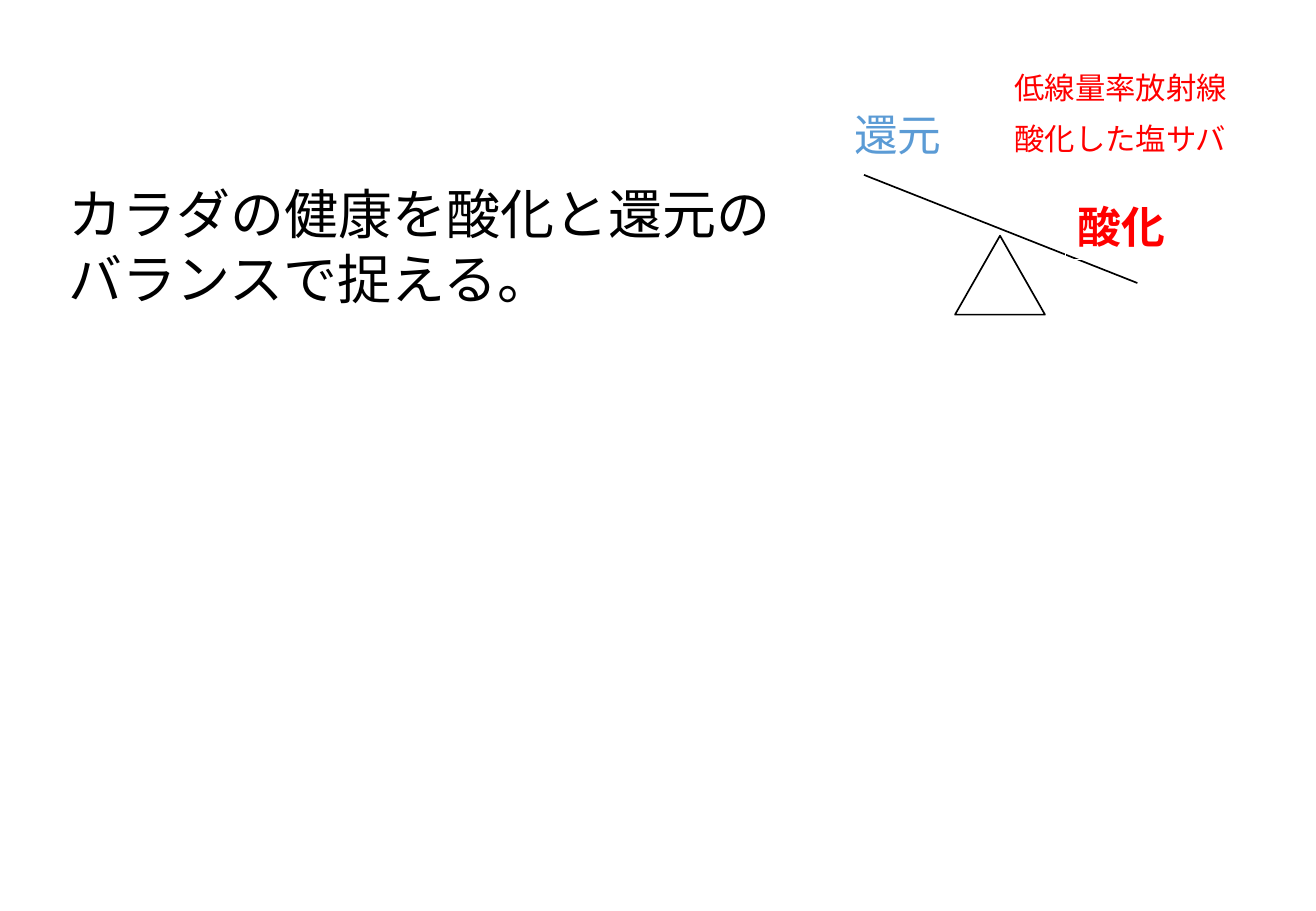
import pptx
import pptx.util
import pptx.dml.color
import pptx.enum.dml
import pptx.enum.lang
import pptx.enum.shapes
import pptx.enum.text
import pptx.oxml

THEME = {
    "font": "Calibri",
    "white": "FFFFFF",
    "black": "000000",
    "reduction": "5B9BD5",
    "oxidation": "FF0000",
    "title_size": 32,
    "label_size": 25.9,
    "note_size": 18,
    "line_width": 1,
    "frame_width": 0.75,
}
PX = 9144


def colour(name):
    return pptx.dml.color.RGBColor.from_string(THEME[name])


def write_text(box, lines, size, colour_name, bold=False):
    frame = box.text_frame
    frame_format = {
        "word_wrap": False,
        "auto_size": pptx.enum.text.MSO_AUTO_SIZE.NONE,
        "vertical_anchor": pptx.enum.text.MSO_ANCHOR.TOP,
    }
    for name, value in frame_format.items():
        setattr(frame, name, value)
    font_format = {
        "name": THEME["font"],
        "size": pptx.util.Pt(THEME[size]),
        "bold": bold,
        "language_id": pptx.enum.lang.MSO_LANGUAGE_ID.JAPANESE,
    }
    for index, line in enumerate(lines):
        para = frame.add_paragraph() if index else frame.paragraphs[0]
        para.alignment = pptx.enum.text.PP_ALIGN.LEFT
        span = para.add_run()
        span.text = line
        for name, value in font_format.items():
            setattr(span.font, name, value)
        span.font.color.rgb = colour(colour_name)


deck = pptx.Presentation()
deck.slide_width = 1083 * PX
deck.slide_height = 750 * PX
page = deck.slides.add_slide(deck.slide_layouts[5])

title = page.shapes.title
title_place = {"left": 46, "top": 144, "width": 604, "height": 118}
for name, value in title_place.items():
    setattr(title, name, value * PX)
write_text(title, ["カラダの健康を酸化と還元の", "バランスで捉える。"], "title_size", "black")

shape_kinds = pptx.enum.shapes.MSO_SHAPE
balance_shapes = [
    (shape_kinds.RECTANGLE, (690, 85, 328, 214), "white"),
    (shape_kinds.ISOSCELES_TRIANGLE, (786, 194, 74, 65), "black"),
]
for kind, place, line_colour in balance_shapes:
    shape = page.shapes.add_shape(kind, *[value * PX for value in place])
    shape.shadow.inherit = False
    shape.fill.solid()
    shape.fill.fore_color.rgb = colour("white")
    shape.line.color.rgb = colour(line_colour)
    shape.line.width = pptx.util.Pt(THEME["line_width"])

beam = page.shapes.add_connector(
    pptx.enum.shapes.MSO_CONNECTOR.STRAIGHT, 936 * PX, 233 * PX, 711 * PX, 144 * PX
)
beam.line.color.rgb = colour("black")
beam.line.width = pptx.util.Pt(THEME["line_width"])
effects = pptx.oxml.parse_xml(
    '<a:effectLst xmlns:a="http://schemas.openxmlformats.org/drawingml/2006/main"/>'
)
beam.element.spPr.append(effects)

labels = [
    ("還元", (693, 84), "reduction", False),
    ("酸化", (877, 160), "oxidation", True),
]
for words, (left, top), colour_name, bold in labels:
    box = page.shapes.add_textbox(left * PX, top * PX, 93 * PX, 54 * PX)
    box.line.color.rgb = colour("white")
    box.line.width = pptx.util.Pt(THEME["frame_width"])
    write_text(box, [words], "label_size", colour_name, bold)

for row, words in enumerate(["低線量率放射線", "酸化した塩サバ"]):
    box = page.shapes.add_textbox(825 * PX, (52 + 42 * row) * PX, 197 * PX, 40 * PX)
    write_text(box, [words], "note_size", "oxidation")

deck.save("out.pptx")
